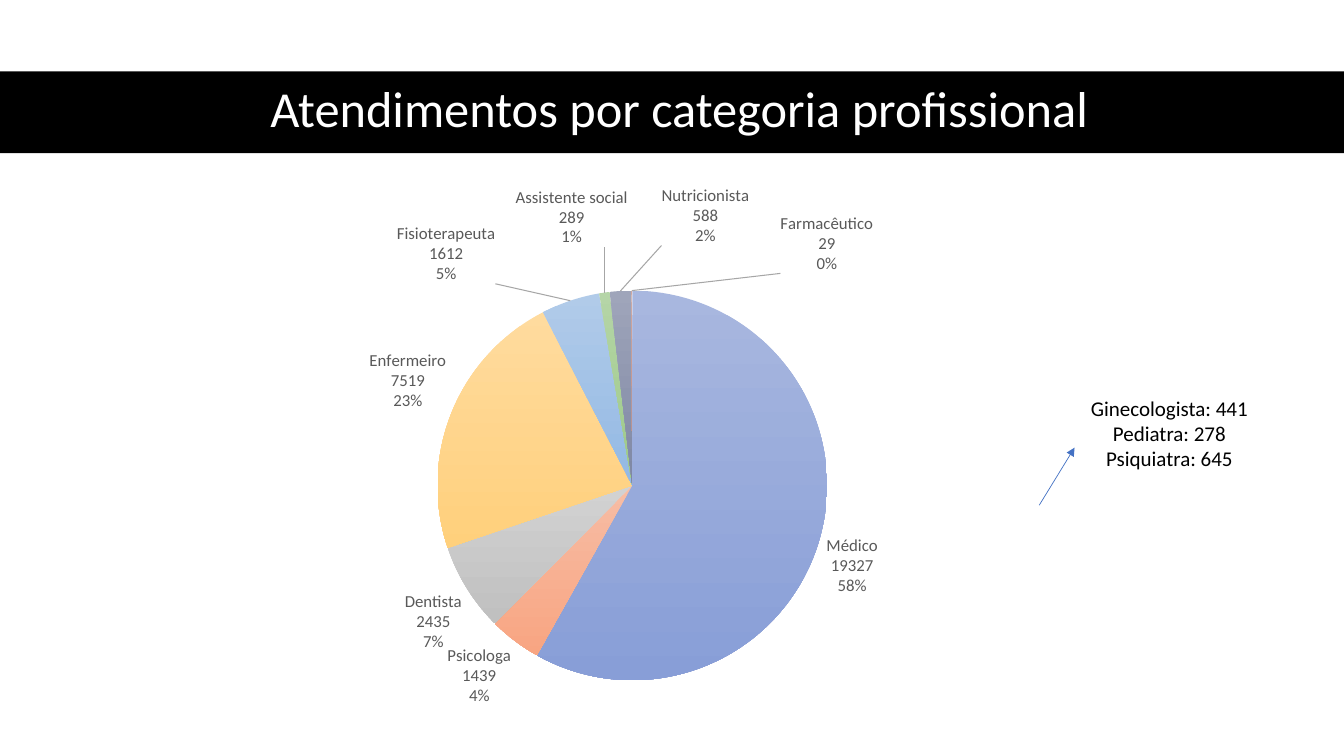
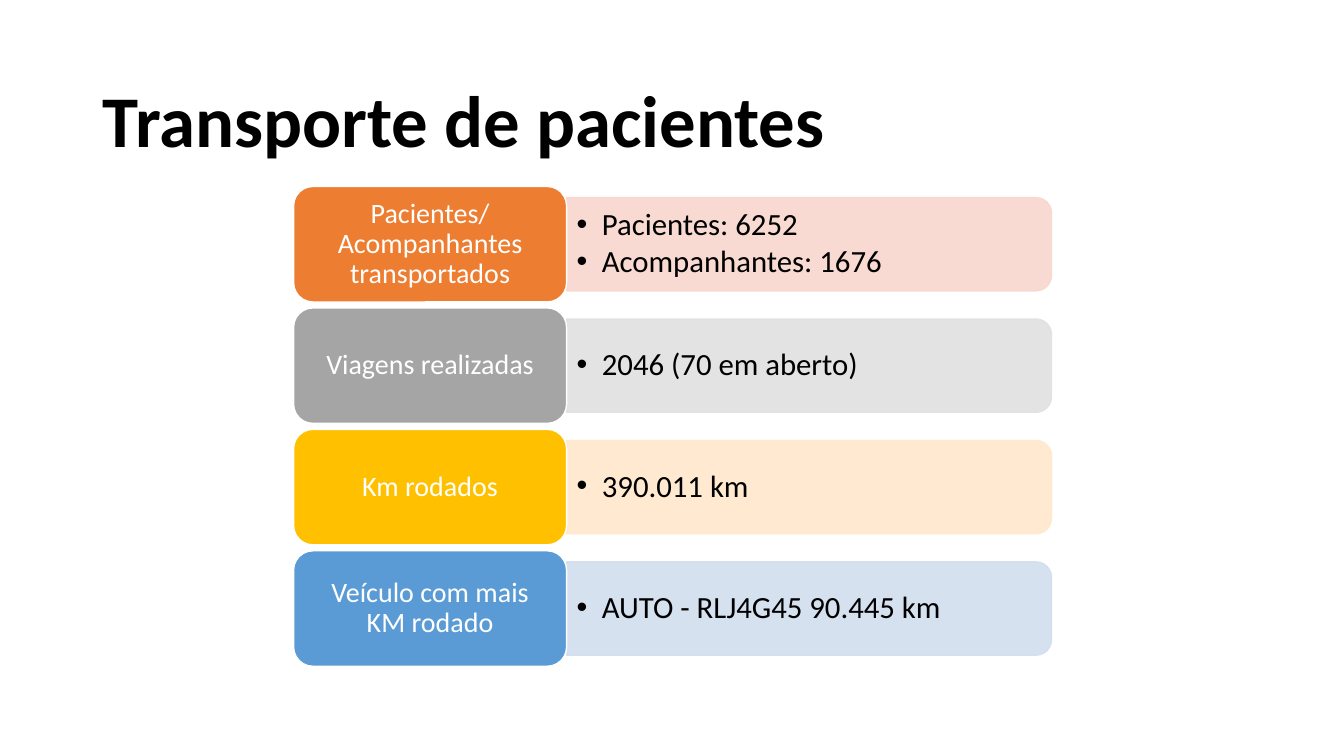
from copy import deepcopy

from pptx import Presentation
from pptx.chart.data import CategoryChartData
from pptx.dml.color import RGBColor
from pptx.enum.chart import XL_CHART_TYPE, XL_LABEL_POSITION
from pptx.enum.shapes import MSO_CONNECTOR, MSO_SHAPE
from pptx.enum.text import MSO_ANCHOR, PP_ALIGN
from pptx.oxml import parse_xml
from pptx.oxml.ns import nsdecls, qn
from pptx.util import Cm, Pt

FONT = "Calibri"
BLACK, WHITE, GRAY, ARROW_BLUE = "000000", "FFFFFF", "595959", "4472C4"
LEADER_GRAY = "A6A6A6"
SLIDE_WIDTH, SLIDE_HEIGHT = 33.87, 19.05

PROFESSIONS = [
    ("Médico", 19327, "A8B7DF", "889ED7"),
    ("Psicologa", 1439, "F7BDA5", "F8A582"),
    ("Dentista", 2435, "D2D2D2", "C0C0C0"),
    ("Enfermeiro", 7519, "FFDB9E", "FFD07C"),
    ("Fisioterapeuta", 1612, "B1CBE9", "93B9E4"),
    ("Assistente social", 289, "B5D5A7", "9CC987"),
    ("Nutricionista", 588, "9FA5BA", "7E87A4"),
    ("Farmacêutico", 29, "CFA69E", "C0887C"),
]
LABEL_OFFSETS = {4: (-0.06, -0.02), 5: (0.02, -0.07), 6: (0.07, -0.07), 7: (0.16, -0.02)}
PLOT_LAYOUT = {"x": 0.084, "y": 0.241, "w": 0.806, "h": 0.689}
SPECIALTIES = ["Ginecologista: 441", "Pediatra: 278", "Psiquiatra: 645"]

TRANSPORT_ROWS = [
    ("Pacientes/ Acompanhantes transportados",
     ["Pacientes: 6252", "Acompanhantes: 1676"], "ED7D31", "F8D7CE"),
    ("Viagens realizadas", ["2046 (70 em aberto)"], "A5A5A5", "E1E1E1"),
    ("Km rodados", ["390.011 km"], "FFC000", "FFE8CC"),
    ("Veículo com mais KM rodado", ["AUTO - RLJ4G45 90.445 km"], "5B9BD5", "D2DEEF"),
]
ROWS_LEFT, ROWS_TOP, ROW_PITCH = 7.4, 4.7, 3.06
LABEL_WIDTH, LABEL_HEIGHT = 6.88, 2.91
BAR_WIDTH, BAR_HEIGHT = 12.22, 2.35


def color(value):
    return RGBColor.from_string(value)


def box(left, top, width, height):
    return Cm(left), Cm(top), Cm(width), Cm(height)


def write(paragraph, text, size, text_color, alignment=PP_ALIGN.LEFT, bold=False):
    paragraph.alignment = alignment
    run = paragraph.add_run()
    run.text = text
    run.font.name = FONT
    run.font.size = Pt(size)
    run.font.bold = bold
    run.font.color.rgb = color(text_color)


def write_lines(frame, lines, *style):
    for index, line in enumerate(lines):
        paragraph = frame.paragraphs[0] if index == 0 else frame.add_paragraph()
        write(paragraph, line, *style)


def add_titled_slide(presentation, text, place, *style):
    slide = presentation.slides.add_slide(presentation.slide_layouts[5])
    title = slide.shapes.title
    title.left, title.top, title.width, title.height = box(*place)
    title.text_frame.vertical_anchor = MSO_ANCHOR.MIDDLE
    paragraph = title.text_frame.paragraphs[0]
    paragraph.line_spacing = 0.9
    write(paragraph, text, *style)
    return slide


def add_filled(slide, preset, place, fill, line=None):
    shape = slide.shapes.add_shape(preset, *box(*place))
    shape.shadow.inherit = False
    shape.fill.solid()
    shape.fill.fore_color.rgb = color(fill)
    if line:
        shape.line.color.rgb = color(line)
        shape.line.width = Pt(1)
    else:
        shape.line.fill.background()
    return shape


def add_text_box(slide, place):
    frame = slide.shapes.add_textbox(*box(*place)).text_frame
    frame.word_wrap = True
    return frame


def layout_xml(values, inner=False):
    target = '<c:layoutTarget val="inner"/><c:xMode val="edge"/><c:yMode val="edge"/>' if inner else ""
    items = "".join(f'<c:{key} val="{value}"/>' for key, value in values.items())
    return f'<c:layout {nsdecls("c")}><c:manualLayout>{target}{items}</c:manualLayout></c:layout>'


def set_plot_layout(chart):
    plot_area = chart._chartSpace.find(".//" + qn("c:plotArea"))
    current = plot_area.find(qn("c:layout"))
    if current is not None:
        plot_area.remove(current)
    plot_area.insert(0, parse_xml(layout_xml(PLOT_LAYOUT, inner=True)))


def set_labels(series):
    labels = series.data_labels
    labels.show_value = labels.show_percentage = labels.show_category_name = True
    labels.position = XL_LABEL_POSITION.OUTSIDE_END
    labels.font.name = FONT
    labels.font.size = Pt(12)
    labels.font.color.rgb = color(GRAY)
    element = labels._element
    for tag in ("c:separator", "c:showLeaderLines", "c:leaderLines"):
        for child in element.findall(qn(tag)):
            element.remove(child)
    separator = parse_xml(f'<c:separator {nsdecls("c")}>\n</c:separator>')
    element.append(separator)
    shared = [deepcopy(child) for child in element if child.tag != qn("c:dLbl")]
    element.append(parse_xml(f'<c:showLeaderLines {nsdecls("c")} val="1"/>'))
    element.append(parse_xml(
        f'<c:leaderLines {nsdecls("c", "a")}><c:spPr><a:ln w="9525"><a:solidFill>'
        f'<a:srgbClr val="{LEADER_GRAY}"/></a:solidFill></a:ln></c:spPr></c:leaderLines>'))
    for position, (index, (x, y)) in enumerate(LABEL_OFFSETS.items()):
        label = parse_xml(f'<c:dLbl {nsdecls("c")}><c:idx val="{index}"/></c:dLbl>')
        label.append(parse_xml(layout_xml({"x": x, "y": y})))
        for child in shared:
            label.append(deepcopy(child))
        element.insert(position, label)


def add_pie(slide, place):
    data = CategoryChartData()
    data.categories = [name for name, *_ in PROFESSIONS]
    data.add_series("Atendimentos", [count for _, count, *_ in PROFESSIONS])
    chart = slide.shapes.add_chart(XL_CHART_TYPE.PIE, *box(*place), data).chart
    chart.has_title = chart.has_legend = False
    chart.font.name = FONT
    chart.font.size = Pt(10)
    chart.plots[0].vary_by_categories = True
    series = chart.plots[0].series[0]
    for index, (_, _, *shades) in enumerate(PROFESSIONS):
        fill = series.points[index].format.fill
        fill.gradient()
        fill.gradient_angle = 270
        for stop, shade in zip(fill.gradient_stops, shades):
            stop.color.rgb = color(shade)
    set_labels(series)
    set_plot_layout(chart)


def add_arrow(slide, start, end):
    arrow = slide.shapes.add_connector(
        MSO_CONNECTOR.STRAIGHT, *(Cm(value) for value in (*start, *end)))
    arrow.line.color.rgb = color(ARROW_BLUE)
    arrow.line.width = Pt(0.5)
    properties = arrow._element.spPr
    properties.find(qn("a:ln")).append(parse_xml(f'<a:tailEnd {nsdecls("a")} type="triangle"/>'))
    properties.append(parse_xml(f'<a:effectLst {nsdecls("a")}/>'))


def add_bar(slide, left, middle, tint):
    place = (left + (BAR_WIDTH - BAR_HEIGHT) / 2, middle - BAR_WIDTH / 2, BAR_HEIGHT, BAR_WIDTH)
    bar = add_filled(slide, MSO_SHAPE.ROUND_2_SAME_RECTANGLE, place, tint, tint)
    bar.rotation = 90
    for shade in bar._element.spPr.iter(qn("a:srgbClr")):
        shade.append(parse_xml(f'<a:alpha {nsdecls("a")} val="90000"/>'))


def add_bullets(slide, left, middle, items):
    frame = add_text_box(slide, (left, middle - BAR_HEIGHT / 2, BAR_WIDTH, BAR_HEIGHT))
    frame.vertical_anchor = MSO_ANCHOR.MIDDLE
    write_lines(frame, items, 22, BLACK)
    for paragraph in frame.paragraphs:
        paragraph.line_spacing = 0.9
        paragraph.space_after = Pt(3)
        properties = paragraph._p.get_or_add_pPr()
        properties.set("marL", str(Cm(0.64)))
        properties.set("indent", str(-Cm(0.64)))
        properties.append(parse_xml(f'<a:buFont {nsdecls("a")} typeface="Arial"/>'))
        properties.append(parse_xml(f'<a:buChar {nsdecls("a")} char="•"/>'))


def add_row_label(slide, top, text, fill):
    place = (ROWS_LEFT, top, LABEL_WIDTH, LABEL_HEIGHT)
    label = add_filled(slide, MSO_SHAPE.ROUNDED_RECTANGLE, place, fill, WHITE)
    frame = label.text_frame
    frame.word_wrap = True
    frame.vertical_anchor = MSO_ANCHOR.MIDDLE
    frame.margin_left = frame.margin_right = Cm(0.34)
    frame.margin_top = frame.margin_bottom = Cm(0.25)
    frame.paragraphs[0].line_spacing = 0.9
    write(frame.paragraphs[0], text, 20, WHITE, PP_ALIGN.CENTER)


def build_attendance(presentation):
    slide = add_titled_slide(presentation, "Atendimentos por categoria profissional",
                             (1.55, 1.78, 31.14, 2.06), 36, WHITE, PP_ALIGN.CENTER)
    band = add_filled(slide, MSO_SHAPE.RECTANGLE, (0, 1.8, SLIDE_WIDTH, 2.06), BLACK)
    slide.shapes._spTree.insert(2, band._element)
    add_pie(slide, (0.97, 3.89, 30.73, 14.25))
    frame = add_text_box(slide, (27.08, 9.83, 4.78, 2.18))
    write_lines(frame, SPECIALTIES, 15, BLACK, PP_ALIGN.CENTER)
    add_arrow(slide, (26.19, 12.73), (27.08, 11.28))


def build_transport(presentation):
    slide = add_titled_slide(presentation, "Transporte de pacientes",
                             (2.34, 1.55, 29.21, 3.15), 52, BLACK, PP_ALIGN.LEFT, True)
    bar_left = ROWS_LEFT + LABEL_WIDTH
    for index, (text, items, fill, tint) in enumerate(TRANSPORT_ROWS):
        top = ROWS_TOP + index * ROW_PITCH
        middle = top + LABEL_HEIGHT / 2
        add_bar(slide, bar_left, middle, tint)
        add_bullets(slide, bar_left, middle, items)
        add_row_label(slide, top, text, fill)


def main():
    presentation = Presentation()
    presentation.slide_width = Cm(SLIDE_WIDTH)
    presentation.slide_height = Cm(SLIDE_HEIGHT)
    build_attendance(presentation)
    build_transport(presentation)
    presentation.save("out.pptx")


if __name__ == "__main__":
    main()
